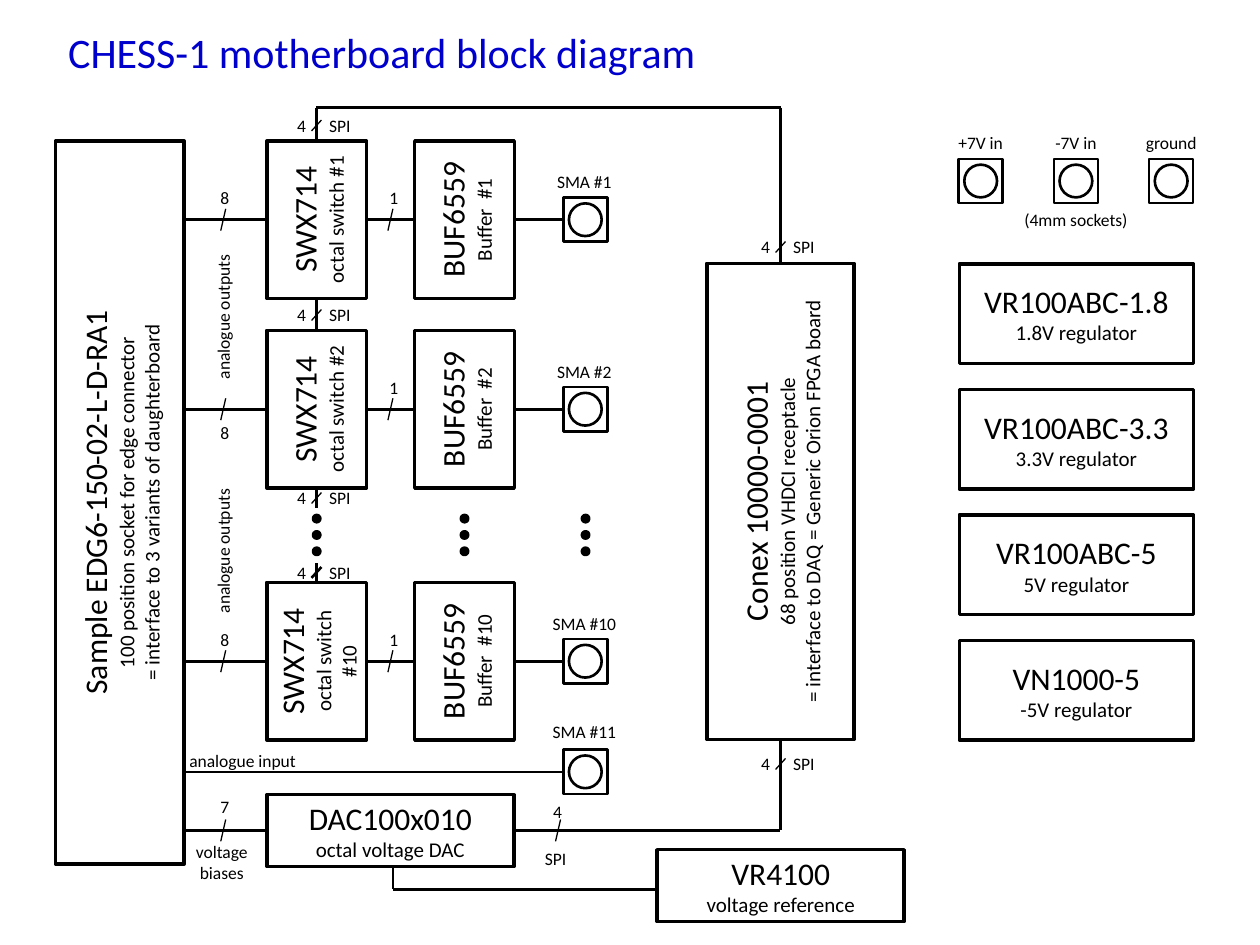
import pptx
import pptx.util
import pptx.dml.color
import pptx.enum.shapes
import pptx.enum.text
import pptx.oxml.ns
from lxml import etree

Cm, Pt = pptx.util.Cm, pptx.util.Pt
SHAPE = pptx.enum.shapes.MSO_SHAPE
ALIGN = pptx.enum.text.PP_ALIGN
ANCHOR = pptx.enum.text.MSO_ANCHOR
BLACK = pptx.dml.color.RGBColor(0x00, 0x00, 0x00)
WHITE = pptx.dml.color.RGBColor(0xFF, 0xFF, 0xFF)
BLUE = pptx.dml.color.RGBColor(0x00, 0x00, 0xCC)
FONT = "Calibri"


def format_paragraph(para, size, color=BLACK, align=ALIGN.CENTER):
    para.alignment = align
    for span in para.runs:
        span.font.name = FONT
        span.font.size = Pt(size)
        span.font.color.rgb = color


def add_outline(shapes, kind, left, top, width, height, weight, fill=None):
    shape = shapes.add_shape(kind, Cm(left), Cm(top), Cm(width), Cm(height))
    shape.shadow.inherit = False
    shape.line.color.rgb = BLACK
    shape.line.width = Pt(weight)
    if fill is None:
        shape.fill.background()
    else:
        shape.fill.solid()
        shape.fill.fore_color.rgb = fill
    return shape


def add_line(page, x1, y1, x2, y2, weight=1.5):
    line = page.shapes.add_connector(pptx.enum.shapes.MSO_CONNECTOR.STRAIGHT,
                                     Cm(x1), Cm(y1), Cm(x2), Cm(y2))
    line.line.color.rgb = BLACK
    line.line.width = Pt(weight)
    etree.SubElement(line.element.spPr, pptx.oxml.ns.qn("a:effectLst"))


def add_label(page, x, y, text, width=0.94, height=0.69, rotation=0):
    """Small caption centred on (x, y)."""
    box = page.shapes.add_textbox(Cm(x - width / 2), Cm(y - height / 2),
                                  Cm(width), Cm(height))
    box.rotation = rotation
    box.text_frame.text = text
    box.text_frame.word_wrap = False
    for para in box.text_frame.paragraphs:
        format_paragraph(para, 10)


def add_block(page, left, top, width, height, lines, vertical=False):
    """Component box: the part name, then smaller description lines."""
    box = add_outline(page.shapes, SHAPE.RECTANGLE, left, top, width, height, 2, WHITE)
    frame = box.text_frame
    frame.text = "\n".join(lines)
    frame.word_wrap = True
    frame.vertical_anchor = ANCHOR.MIDDLE
    if vertical:
        box.element.txBody.bodyPr.set("vert", "vert270")
    for index, para in enumerate(frame.paragraphs):
        format_paragraph(para, 12 if index else 18)


def add_socket(page, x, y):
    """Round socket in a square, centred on (x, y)."""
    group = page.shapes.add_group_shape()
    for kind, size in ((SHAPE.RECTANGLE, 0.89), (SHAPE.OVAL, 0.66)):
        add_outline(group.shapes, kind, x - size / 2, y - size / 2, size, size, 1.5)


def add_dots(page, x, y):
    """Vertical ellipsis centred on (x, y)."""
    group = page.shapes.add_group_shape()
    for step in (-1, 0, 1):
        add_outline(group.shapes, SHAPE.OVAL, x - 0.06, y + 0.33 * step - 0.06,
                    0.13, 0.13, 2, BLACK)


def add_bus_mark(page, x, y):
    add_line(page, x + 0.05, y - 0.22, x - 0.05, y + 0.22, 0.75)


def add_spi_mark(page, x, y, weight=0.75):
    add_line(page, x + 0.1, y - 0.11, x - 0.1, y + 0.11, weight)
    add_label(page, x - 0.3, y, "4", 0.69)
    add_label(page, x + 0.47, y, "SPI")


def draw_title(page, left, top, width, height):
    title = page.shapes.title
    title.left, title.top, title.width, title.height = map(Cm, (left, top, width, height))
    title.text_frame.text = "CHESS-1 motherboard block diagram"
    title.text_frame.vertical_anchor = ANCHOR.TOP
    format_paragraph(title.text_frame.paragraphs[0], 24, BLUE, ALIGN.LEFT)


def draw_channel(page, left, top, number, count_offset):
    """One row: bus, switch, buffer and output socket."""
    middle = top + 1.59
    for start, end in ((0, 1.67), (3.68, 4.65), (6.65, 7.64)):
        add_line(page, left + start, middle, left + end, middle)
    add_bus_mark(page, left + 0.79, middle)
    add_label(page, left + 0.82, middle + count_offset, "8", 0.69)
    add_bus_mark(page, left + 4.16, middle)
    add_label(page, left + 4.23, middle - 0.43, "1", 0.69)
    add_block(page, left + 1.67, top, 2.01, 3.18,
              ["SWX714", f"octal switch #{number}"], True)
    add_block(page, left + 4.65, top, 2.01, 3.18,
              ["BUF6559", f"Buffer  #{number}"], True)
    add_socket(page, left + 8.09, middle)
    add_label(page, left + 8.07, middle - 0.76, f"SMA #{number}", 1.8)


def draw_channels(page, left, top):
    """Ten analogue channels, the middle ones shown as dots."""
    for offset, number, count_offset in ((0, 1, -0.43), (3.82, 2, 0.47), (8.9, 10, -0.43)):
        draw_channel(page, left, top + offset, number, count_offset)
    for x in (2.67, 5.65, 8.09):
        add_dots(page, left + x, top + 7.94)
    for y in (3.55, 8.27):
        add_label(page, left + 0.79, top + y, "analogue outputs", 3.05, rotation=270)
    # Control bus from switch to switch
    chain = left + 2.67
    for start, end in ((-0.67, 0), (3.18, 3.82), (7, 7.4), (8.51, 8.9)):
        add_line(page, chain, top + start, chain, top + end)
    for y, weight in ((-0.31, 0.75), (3.51, 0.75), (7.2, 0.75), (8.7, 1.5)):
        add_spi_mark(page, chain, top + y, weight)


def draw_lower_rows(page, left, top):
    """Analogue input, bias converter and voltage reference."""
    add_line(page, left, top, left + 7.64, top)
    add_label(page, left + 1.18, top - 0.22, "analogue input", 2.77)
    add_socket(page, left + 8.09, top)
    add_label(page, left + 8.07, top - 0.81, "SMA #11", 1.8)
    bias = top + 1.18
    add_line(page, left, bias, left + 1.67, bias)
    add_bus_mark(page, left + 0.79, bias)
    add_label(page, left + 0.82, bias - 0.47, "7", 0.69)
    add_label(page, left + 0.76, bias + 0.65, "voltage\nbiases", 1.57, 1.12)
    add_line(page, left + 6.65, bias, left + 12.01, bias)
    add_bus_mark(page, left + 7.54, bias)
    add_label(page, left + 7.53, bias - 0.37, "4", 0.69)
    add_label(page, left + 7.49, bias + 0.57, "SPI")
    add_block(page, left + 1.67, bias - 0.72, 4.98, 1.45,
              ["DAC100x010", "octal voltage DAC"])
    add_block(page, left + 9.54, bias + 0.39, 4.98, 1.45,
              ["VR4100", "voltage reference"])
    add_line(page, left + 4.21, bias + 0.73, left + 4.21, bias + 1.19)
    add_line(page, left + 4.21, bias + 1.19, left + 9.57, bias + 1.19)


def draw_interface(page, left, top, width, height):
    """Data acquisition connector with its control buses."""
    middle = left + width / 2
    add_line(page, left - 7.87, top - 3.14, middle, top - 3.14)
    add_line(page, middle, top - 3.14, middle, top)
    add_line(page, middle, top + height, middle, top + height + 1.83)
    for y in (top - 0.33, top + height + 0.49):
        add_spi_mark(page, middle, y)
    add_block(page, left, top, width, height,
              ["Conex 10000-0001", "68 position VHDCI receptacle",
               "= interface to DAQ = Generic Orion FPGA board"], True)


def draw_power(page, left, top):
    """Supply sockets and regulators."""
    for index, name in enumerate(("+7V in", "-7V in", "ground")):
        x = left + 0.43 + 1.92 * index
        add_socket(page, x, top + 0.45)
        add_label(page, x, top - 0.32, name, 1.9)
    add_label(page, left + 2.35, top + 1.23, "(4mm sockets)", 2.8)
    regulators = (("VR100ABC-1.8", "1.8V"), ("VR100ABC-3.3", "3.3V"),
                  ("VR100ABC-5", "5V"), ("VN1000-5", "-5V"))
    for index, (name, voltage) in enumerate(regulators):
        add_block(page, left, top + 2.12 + 2.53 * index, 4.72, 2.01,
                  [name, f"{voltage} regulator"])


def main():
    deck = pptx.Presentation()
    deck.slide_width, deck.slide_height = Cm(25.4), Cm(19.05)
    page = deck.slides.add_slide(deck.slide_layouts[5])
    draw_title(page, 1.12, 0.41, 13.34, 1.27)
    add_block(page, 1.12, 2.84, 2.59, 14.58,
              ["Sample EDG6-150-02-L-D-RA1", "100 position socket for edge connector",
               "= interface to 3 variants of daughterboard"], True)
    draw_channels(page, 3.71, 2.84)
    draw_lower_rows(page, 3.71, 15.56)
    draw_interface(page, 14.25, 5.31, 2.97, 9.6)
    draw_power(page, 19.34, 3.2)
    deck.save("out.pptx")


if __name__ == "__main__":
    main()
